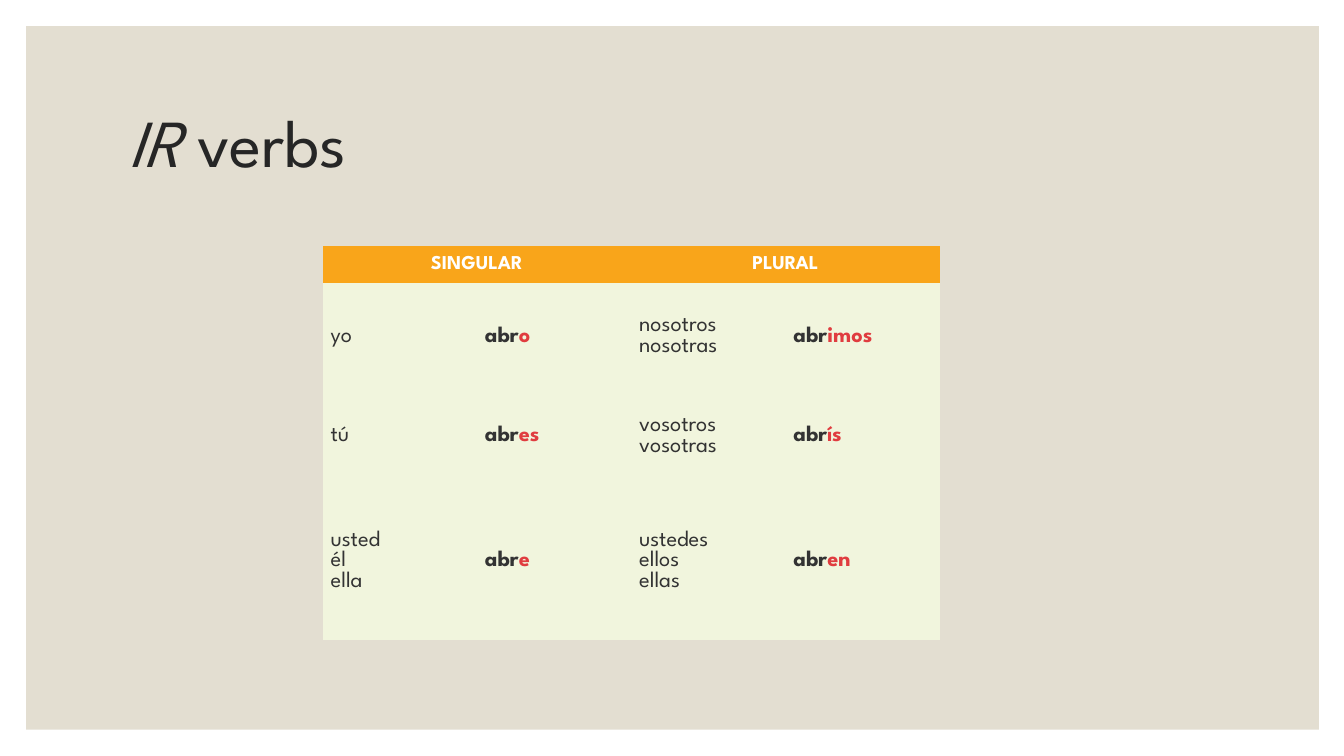
from dataclasses import dataclass

from pptx import Presentation
from pptx.dml.color import RGBColor
from pptx.enum.shapes import MSO_SHAPE
from pptx.enum.text import MSO_ANCHOR, MSO_AUTO_SIZE, PP_ALIGN
from pptx.oxml.ns import qn
from pptx.slide import Slide
from pptx.table import Table, _Cell
from pptx.text.text import _Paragraph
from pptx.util import Inches, Pt

RECT = MSO_SHAPE.RECTANGLE
MIDDLE = MSO_ANCHOR.MIDDLE
NO_FIT = MSO_AUTO_SIZE.NONE
LEFT, CENTER = PP_ALIGN.LEFT, PP_ALIGN.CENTER

SAND = RGBColor(0xE3, 0xDE, 0xD1)
ORANGE = RGBColor(0xF9, 0xA5, 0x1A)
CREAM = RGBColor(0xF1, 0xF5, 0xDD)
WHITE = RGBColor(0xFF, 0xFF, 0xFF)
INK = RGBColor(0x26, 0x26, 0x26)
GREY = RGBColor(0x33, 0x33, 0x33)
RED = RGBColor(0xE0, 0x3C, 0x3F)

FONT = "League Spartan"
PLAIN_STYLE = "{2D5ABB26-0587-4C30-8999-92F81FD0307C}"
STEM = "abr"


@dataclass
class Form:
    who: list[str]
    ending: str


@dataclass
class Person:
    height: float
    forms: tuple[Form, Form]


HEADS = ("SINGULAR", "PLURAL")
HEAD_H = 0.37
COL_W = 1.53
PEOPLE = [
    Person(1.06, (Form(["yo"], "o"), Form(["nosotros", "nosotras"], "imos"))),
    Person(0.92, (Form(["tú"], "es"), Form(["vosotros", "vosotras"], "ís"))),
    Person(1.56, (Form(["usted", "él", "ella"], "e"),
                  Form(["ustedes", "ellos", "ellas"], "en"))),
]


def add_run(para: _Paragraph, text: str, size: float, color: RGBColor,
            bold: bool = False, italic: bool = False) -> None:
    run = para.add_run()
    run.text = text
    font = run.font
    font.name, font.size = FONT, Pt(size)
    font.bold, font.italic = bold, italic
    font.color.rgb = color


def style_cell(cell: _Cell, fill: RGBColor, side: float, edge: float) -> _Paragraph:
    cell.fill.solid()
    cell.fill.fore_color.rgb = fill
    cell.vertical_anchor = MIDDLE
    cell.margin_left = cell.margin_right = Inches(side)
    cell.margin_top = cell.margin_bottom = Inches(edge)
    return cell.text_frame.paragraphs[0]


def add_frame(slide: Slide) -> None:
    frame = slide.shapes.add_shape(RECT, Inches(0.26), Inches(0.26),
                                   Inches(12.82), Inches(6.98))
    frame.shadow.inherit = False
    frame.fill.solid()
    frame.fill.fore_color.rgb = SAND
    frame.line.fill.background()
    # Send it behind the title
    slide.shapes.element.insert(2, frame.element)


def add_title(slide: Slide) -> None:
    title = slide.shapes.title
    title.left, title.top = Inches(1.17), Inches(0.7)
    title.width, title.height = Inches(11), Inches(1.5)
    text = title.text_frame
    text.word_wrap = True
    text.auto_size = NO_FIT
    text.vertical_anchor = MIDDLE
    para = text.paragraphs[0]
    para.alignment = LEFT
    para.line_spacing = 0.9
    add_run(para, "IR", 48, INK, italic=True)
    add_run(para, " verbs", 48, INK)


def make_table(slide: Slide) -> Table:
    heights = [HEAD_H] + [person.height for person in PEOPLE]
    cols = 2 * len(HEADS)
    shape = slide.shapes.add_table(len(heights), cols, Inches(3.2), Inches(2.44),
                                   Inches(COL_W * cols), Inches(sum(heights)))
    table = shape.table
    table.first_row = table.horz_banding = False
    next(shape.element.iter(qn("a:tableStyleId"))).text = PLAIN_STYLE
    for col in table.columns:
        col.width = Inches(COL_W)
    for row, height in zip(table.rows, heights):
        row.height = Inches(height)
    return table


def fill_table(table: Table) -> None:
    # Header: one merged cell over each pair of columns
    for i, head in enumerate(HEADS):
        cell = table.cell(0, 2 * i)
        cell.merge(table.cell(0, 2 * i + 1))
        para = style_cell(cell, ORANGE, 0.05, 0.03)
        para.alignment = CENTER
        add_run(para, head, 14, WHITE, bold=True)

    # Body: pronouns, then stem and ending
    for r, person in enumerate(PEOPLE, 1):
        for i, form in enumerate(person.forms):
            para = style_cell(table.cell(r, 2 * i), CREAM, 0.08, 0.04)
            for n, word in enumerate(form.who):
                if n:
                    para.add_line_break()
                add_run(para, word, 16, GREY)
            para = style_cell(table.cell(r, 2 * i + 1), CREAM, 0.08, 0.04)
            add_run(para, STEM, 16, GREY, bold=True)
            add_run(para, form.ending, 16, RED, bold=True)


def main() -> None:
    deck = Presentation()
    deck.slide_width, deck.slide_height = Inches(13.33), Inches(7.5)
    slide = deck.slides.add_slide(deck.slide_layouts[5])
    back = slide.background.fill
    back.solid()
    back.fore_color.rgb = WHITE
    add_frame(slide)
    add_title(slide)
    fill_table(make_table(slide))
    deck.save("out.pptx")


if __name__ == "__main__":
    main()
